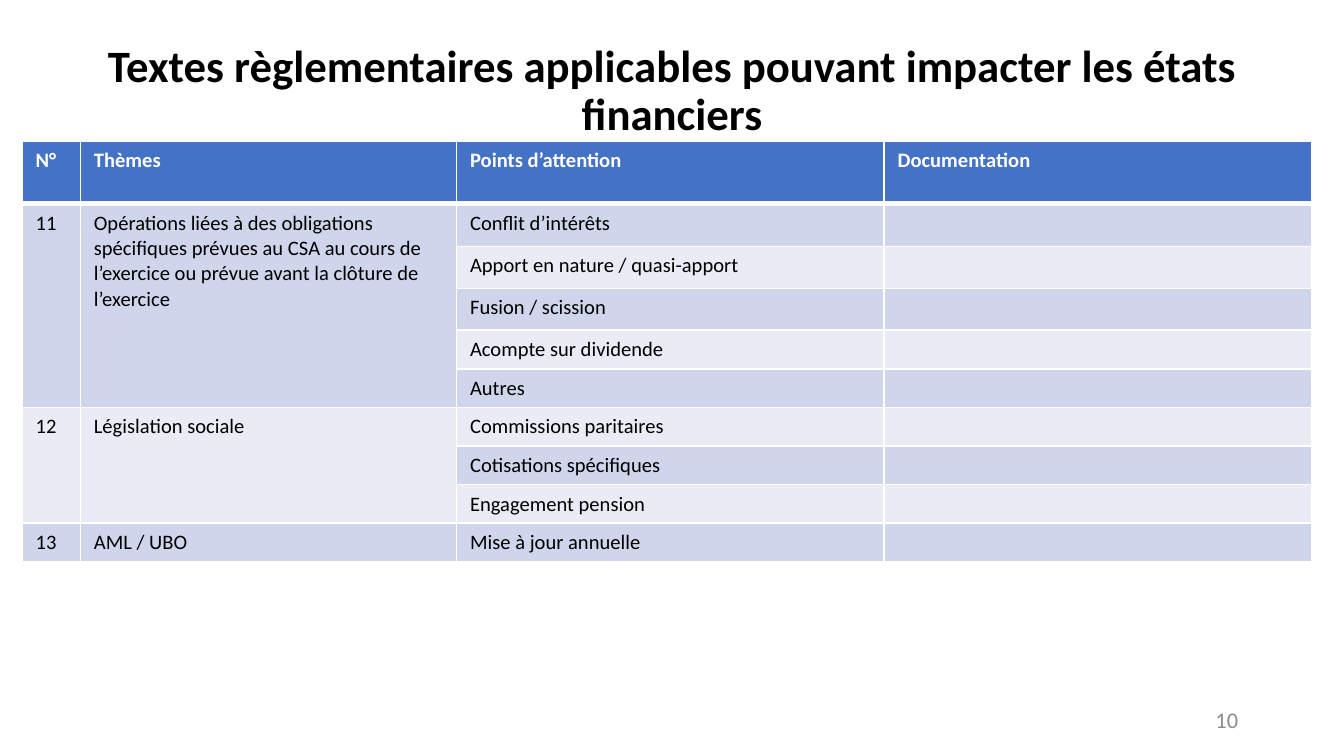
from dataclasses import dataclass

from lxml.etree import SubElement as Sub
from pptx import Presentation
from pptx.dml.color import RGBColor as Rgb
from pptx.enum.text import MSO_ANCHOR as Anchor, PP_ALIGN as Align
from pptx.oxml.ns import qn
from pptx.util import Cm, Pt


@dataclass(frozen=True)
class Theme:
    font: str = "Calibri"
    black: str = "000000"
    white: str = "FFFFFF"
    grey: str = "8C8C8C"
    head: str = "4472C4"
    dark: str = "CFD5EA"
    light: str = "E9EBF5"
    title: int = 24
    body: int = 11
    page: int = 12


THEME = Theme()

TITLE = "Textes règlementaires applicables pouvant impacter les états financiers"
HEADS = ["N°", "Thèmes", "Points d’attention", "Documentation"]
TOPICS = [
    ("11", "Opérations liées à des obligations spécifiques prévues au CSA "
           "au cours de l’exercice ou prévue avant la clôture de l’exercice",
     ["Conflit d’intérêts", "Apport en nature / quasi-apport",
      "Fusion / scission", "Acompte sur dividende", "Autres"]),
    ("12", "Législation sociale",
     ["Commissions paritaires", "Cotisations spécifiques", "Engagement pension"]),
    ("13", "AML / UBO", ["Mise à jour annuelle"]),
]
COLS = [1.1, 7.11, 8.08, 8.08]
ROWS = [1.19, 0.81, 0.79, 0.79] + [0.73] * 6


def put_text(frame, text, size=THEME.body, color=THEME.black, bold=False,
             align=Align.LEFT, anchor=Anchor.TOP, space=None):
    frame.word_wrap = True
    frame.vertical_anchor = anchor
    para = frame.paragraphs[0]
    para.alignment = align
    para.line_spacing = space
    run = para.add_run()
    run.text = text
    font = run.font
    font.name, font.size, font.bold = THEME.font, Pt(size), bold
    font.color.rgb = Rgb.from_string(color)


def add_label(slide, text, left, top, width, height, **form):
    box = slide.shapes.add_textbox(Cm(left), Cm(top), Cm(width), Cm(height))
    put_text(box.text_frame, text, anchor=Anchor.MIDDLE, **form)


def set_edges(cell, base):
    props = cell._tc.get_or_add_tcPr()
    for spot, (tag, width) in enumerate([("lnL", 1), ("lnR", 1), ("lnT", 1), ("lnB", base)]):
        line = Sub(props, qn(f"a:{tag}"), w=str(Pt(width)))
        fill = Sub(line, qn("a:solidFill"))
        Sub(fill, qn("a:srgbClr"), val=THEME.white)
        props.insert(spot, line)


def style_cell(cell, row):
    tone = THEME.head if row == 0 else THEME.dark if row % 2 else THEME.light
    cell.fill.solid()
    cell.fill.fore_color.rgb = Rgb.from_string(tone)
    set_edges(cell, 3 if row == 0 else 1)
    para = cell.text_frame.paragraphs[0]
    Sub(para._p, qn("a:endParaRPr"), sz=str(THEME.body * 100))


def add_grid(slide):
    grid = slide.shapes.add_table(
        len(ROWS), len(COLS), Cm(0.42), Cm(2.66), Cm(sum(COLS)), Cm(sum(ROWS))).table
    for col, width in zip(grid.columns, COLS):
        col.width = Cm(width)
    for row, height in enumerate(ROWS):
        grid.rows[row].height = Cm(height)
        for col in range(len(COLS)):
            style_cell(grid.cell(row, col), row)
    for col, head in enumerate(HEADS):
        put_text(grid.cell(0, col).text_frame, head, color=THEME.white, bold=True)
    fill_topics(grid)


def fill_topics(grid):
    row = 1
    for number, theme, points in TOPICS:
        last = row + len(points) - 1
        for col, text in enumerate([number, theme]):
            cell = grid.cell(row, col)
            put_text(cell.text_frame, text)
            if last > row:
                cell.merge(grid.cell(last, col))
        for step, point in enumerate(points):
            put_text(grid.cell(row + step, 2).text_frame, point)
        row = last + 1


def main():
    deck = Presentation()
    deck.slide_width, deck.slide_height = Cm(25.4), Cm(14.29)
    slide = deck.slides.add_slide(deck.slide_layouts[6])
    add_label(slide, "10", 17.93, 13.23, 5.72, 0.76,
              size=THEME.page, color=THEME.grey, align=Align.RIGHT)
    add_grid(slide)
    add_label(slide, TITLE, 1.75, 0.36, 21.9, 2.77,
              size=THEME.title, bold=True, align=Align.CENTER, space=0.9)
    deck.save("out.pptx")


if __name__ == "__main__":
    main()
